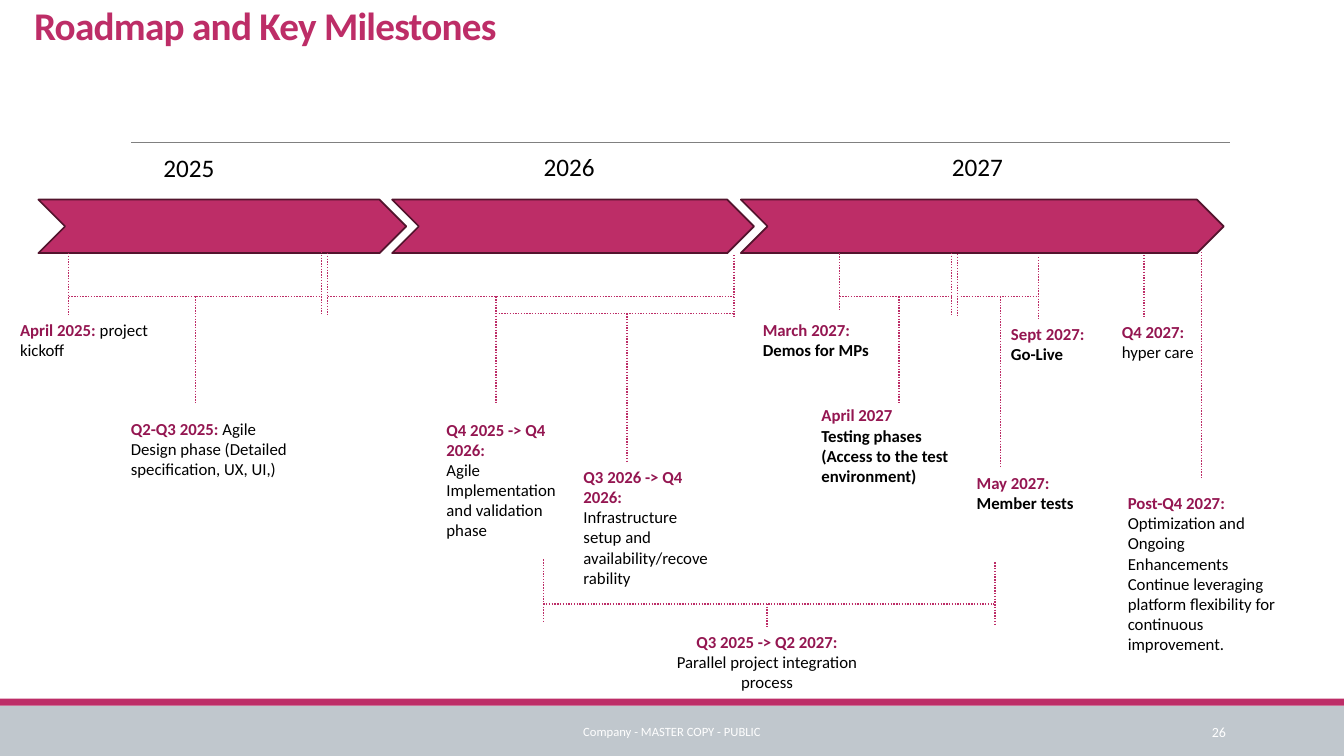
from lxml import etree
from pptx import Presentation
from pptx.dml.color import RGBColor
from pptx.enum.dml import MSO_LINE
from pptx.enum.shapes import MSO_CONNECTOR, MSO_SHAPE
from pptx.enum.text import MSO_ANCHOR, MSO_AUTO_SIZE, PP_ALIGN
from pptx.oxml.ns import qn
from pptx.util import Pt

STRAIGHT = MSO_CONNECTOR.STRAIGHT
RECTANGLE, CHEVRON = MSO_SHAPE.RECTANGLE, MSO_SHAPE.CHEVRON
DOTTED = MSO_LINE.ROUND_DOT
TOP, MIDDLE = MSO_ANCHOR.TOP, MSO_ANCHOR.MIDDLE
GROW, FIXED = MSO_AUTO_SIZE.SHAPE_TO_FIT_TEXT, MSO_AUTO_SIZE.NONE
LEFT, CENTER, RIGHT = PP_ALIGN.LEFT, PP_ALIGN.CENTER, PP_ALIGN.RIGHT

COLORS = {
    "pink": "BD2D67", "outline": "53142D", "date": "941651", "text": "000000",
    "rule": "808080", "footer": "C0C7CD", "white": "FFFFFF",
}
TOP_SIDE = 0
PAGE_WIDTH, PAGE_HEIGHT = 960, 540
TICK_HEIGHT = 44.2
BRACKET, LOWER_BRACKET, PARALLEL_BRACKET = 211.7, 223.9, 431.3

# left, width
ARROWS = [(27.4, 262.8), (529.2, 344.9), (280.1, 258.5)]
# text, left, top
YEARS = [("2025", 97.9, 105.1), ("2026", 369.4, 104.4), ("2027", 661, 104.4)]

# x, top
TICKS = [
    (49, 180.7), (229.7, 180), (234, 180.7), (524.2, 182.2), (599.8, 177.1),
    (679.7, 180.7), (684, 181.4), (741.6, 183.6), (817.2, 182.2),
    (388.1, 399.6), (710.6, 401.8),
]
# x, top, bottom
DROPS = [
    (139.7, BRACKET, 288.7), (354.2, BRACKET, 288.7), (642.2, BRACKET, 288),
    (714.6, BRACKET, 333.4), (447.8, LOWER_BRACKET, 329.8), (858.2, 180, 342),
]
# y, left, right
SPANS = [
    (BRACKET, 49, 229.7), (BRACKET, 234, 524.2), (BRACKET, 599.8, 679.7),
    (BRACKET, 686.2, 741.6), (LOWER_BRACKET, 354.2, 524.2),
    (PARALLEL_BRACKET, 388.1, 608.4), (PARALLEL_BRACKET, 608.4, 709.9),
]

# (left, top, width, height), paragraphs of (text, style) spans
MILESTONES = [
    ((7.2, 224.6, 106.6, 36),
     [[("April 2025: ", "date"), ("project kickoff", "note")]]),
    ((86.4, 295.2, 132.5, 51),
     [[("Q2-Q3 2025: ", "date"),
       ("Agile Design phase (Detailed specification, UX, UI,)", "note")]]),
    ((311.8, 295.9, 106.6, 94.3),
     [[("Q4 2025 -> Q4 2026:", "date")],
      [("Agile Implementation and validation phase", "note")]]),
    ((409.7, 329.8, 106.6, 94.3),
     [[("Q3 2026 -> Q4 2026:", "date")],
      [("Infrastructure setup and availability/recoverability", "note")]]),
    ((537.8, 224.6, 98.6, 36),
     [[("March 2027:", "date")], [("Demos for MPs", "strong")]]),
    ((579.6, 285.8, 106.6, 65.5),
     [[("April 2027", "date")],
      [("Testing phases (Access to the test environment)", "strong")]]),
    ((690.5, 334.1, 106.6, 36),
     [[("May 2027:", "date")], [("Member tests", "strong")]]),
    ((715, 227.5, 106.6, 36),
     [[("Sept 2027:", "date")], [("Go-Live", "strong")]]),
    ((794.2, 226.1, 106.6, 36),
     [[("Q4 2027:", "date")], [("hyper care", "note")]]),
    ((798.5, 348.5, 127.4, 123.8),
     [[("Post-Q4 2027: ", "date"),
       ("Optimization and Ongoing Enhancements", "note")],
      [("Continue leveraging platform flexibility for continuous improvement.",
        "note")]]),
]


class RoadmapSlide:
    font = "Calibri"
    # size, colour, bold
    styles = {
        "title": (28, "pink", True), "year": (18, "text", False),
        "date": (12, "date", True), "note": (12, "text", False),
        "strong": (12, "text", True), "number": (10, "white", False),
        "footer": (9, "white", False),
    }

    def __init__(self, deck):
        self.slide = deck.slides.add_slide(deck.slide_layouts[6])

    def color(self, name):
        return RGBColor.from_string(COLORS[name])

    def shape(self, kind, place, fill, outline=None):
        shape = self.slide.shapes.add_shape(kind, *map(Pt, place))
        shape.shadow.inherit = False
        shape.fill.solid()
        shape.fill.fore_color.rgb = self.color(fill)
        if outline:
            shape.line.color.rgb = self.color(outline)
            shape.line.width = Pt(1.25)
        else:
            shape.line.fill.background()
        return shape

    def line(self, start, end, color="pink", width=1, dash=DOTTED):
        line = self.slide.shapes.add_connector(STRAIGHT, *map(Pt, start + end))
        line.line.color.rgb = self.color(color)
        line.line.width = Pt(width)
        if dash:
            line.line.dash_style = dash
        etree.SubElement(line._element.spPr, qn("a:effectLst"))
        return line

    def text(self, place, paragraphs, align=LEFT, anchor=TOP, fit=GROW):
        """Add a text box whose paragraphs are lists of (text, style) spans."""
        box = self.slide.shapes.add_textbox(*map(Pt, place))
        frame = box.text_frame
        frame.word_wrap = True
        frame.auto_size = fit
        frame.vertical_anchor = anchor
        for index, spans in enumerate(paragraphs):
            para = frame.add_paragraph() if index else frame.paragraphs[0]
            para.alignment = align
            for words, style in spans:
                span = para.add_run()
                span.text = words
                size, color, bold = self.styles[style]
                span.font.name = self.font
                span.font.size = Pt(size)
                span.font.bold = bold
                span.font.color.rgb = self.color(color)
        return box

    def title(self, place, words):
        para = self.text(place, [[(words, "title")]]).text_frame.paragraphs[0]
        para.line_spacing = 0.85
        para.runs[0].font._element.set("spc", "-50")


def main():
    deck = Presentation()
    deck.slide_width, deck.slide_height = Pt(PAGE_WIDTH), Pt(PAGE_HEIGHT)
    page = RoadmapSlide(deck)

    page.shape(RECTANGLE, (0, 504, PAGE_WIDTH, 36), "footer")
    page.shape(RECTANGLE, (0, 499, PAGE_WIDTH, 5), "pink")
    page.line((93.6, 101.5), (878.4, 101.5), "rule", 0.5, None)
    page.title((17.3, 2.9, 792, 36.7), "Roadmap and Key Milestones")

    for left, width in ARROWS:
        page.shape(CHEVRON, (left, 142.6, width, 38.2), "pink", "outline")
    for year, left, top in YEARS:
        page.text((left, top, 74.2, 29.1), [[(year, "year")]], CENTER)

    for x, top in TICKS:
        page.line((x, top), (x, top + TICK_HEIGHT))
    for x, top, bottom in DROPS:
        page.line((x, top), (x, bottom))
    for y, left, right in SPANS:
        page.line((left, y), (right, y))

    for place, paragraphs in MILESTONES:
        page.text(place, paragraphs)
    integration = page.text(
        (461.5, 447.8, 172.8, 51),
        [[("Q3 2025 -> Q2 2027:", "date")],
         [("Parallel project integration process", "note")]], CENTER)
    drop = page.line((547.9, PARALLEL_BRACKET), (547.9, 447.8))
    drop.end_connect(integration, TOP_SIDE)

    page.text((290.2, 508.3, 379.4, 28.8),
              [[("Company - MASTER COPY - PUBLIC", "footer")]],
              CENTER, MIDDLE, FIXED)
    page.text((779.8, 508.3, 103, 28.8), [[("26", "number")]],
              RIGHT, MIDDLE, FIXED)
    deck.save("out.pptx")


if __name__ == "__main__":
    main()
